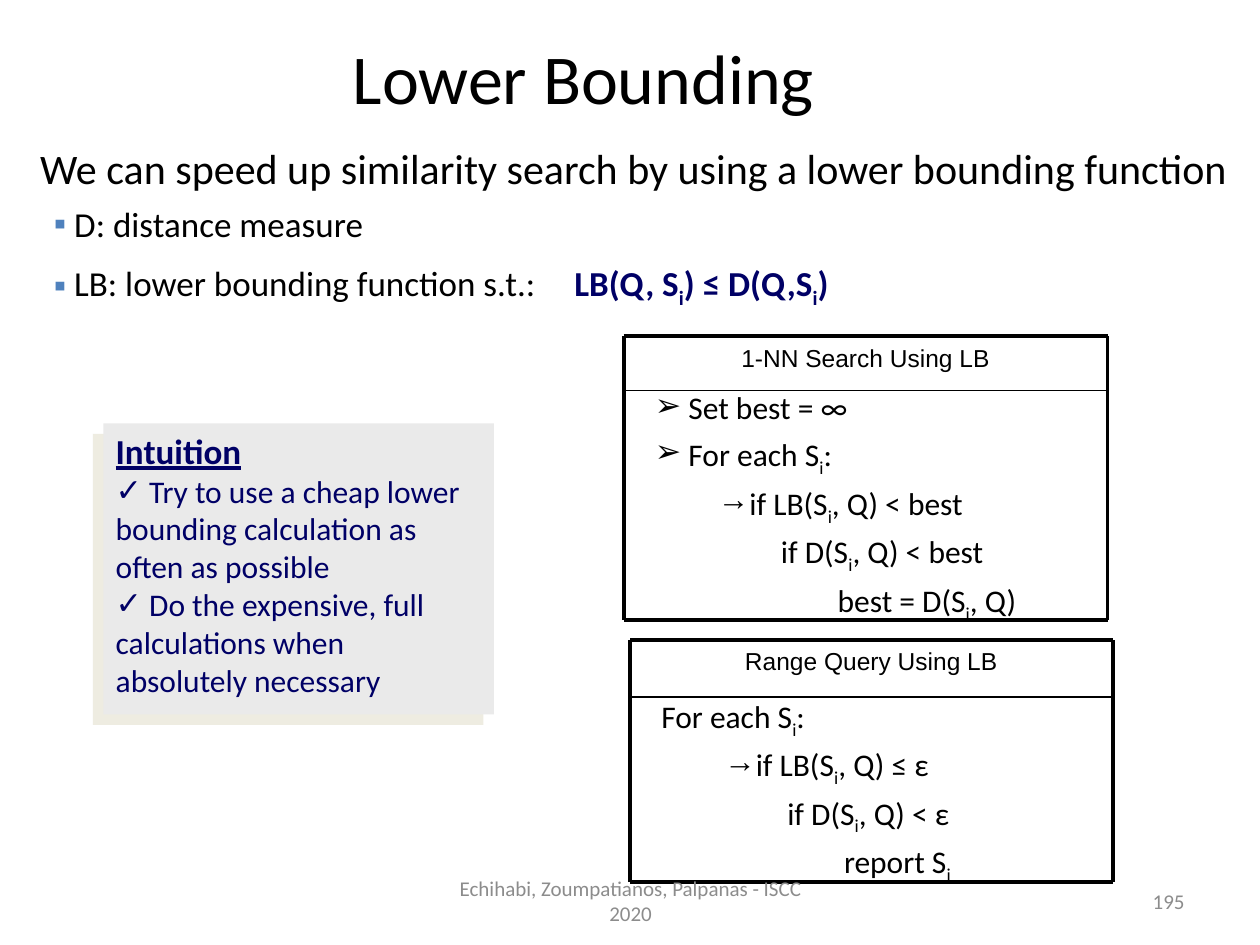
from lxml import etree
from pptx import Presentation
from pptx.dml.color import RGBColor
from pptx.enum.shapes import MSO_CONNECTOR, MSO_SHAPE
from pptx.enum.text import MSO_ANCHOR, PP_ALIGN
from pptx.oxml.ns import qn
from pptx.util import Inches, Pt

BLACK, NAVY, GREY, BLUE = "000000", "000066", "8C8C8C", "4F81BD"
PANEL, SHADOW = "EAEAEA", "EEECE1"

# Content: "_i" stands for a subscript i
TITLE = "Lower Bounding"
CLAIM = "We can speed up similarity search by using a lower bounding function"
DISTANCE = " D: distance measure"
BOUND = " LB: lower bounding function s.t.:\t"
INEQUALITY = "LB(Q, S_i) ≤ D(Q,S_i)"
INTUITION = [
    " Try to use a cheap lower bounding calculation as often as possible",
    " Do the expensive, full calculations when absolutely necessary",
]
# Each algorithm: heading, frame (left, top, rule, right, bottom),
# text box, steps (indent, bullet, text)
ALGORITHMS = [
    ("1-NN Search Using LB", (4.95, 2.67, 3.1, 8.79, 4.92), (5.1, 3.11, 3.4, 1.75), [
        (0, "➢", " Set best = ∞"),
        (0, "➢", " For each S_i:"),
        (0.5, "→", "if LB(S_i, Q) < best"),
        (1, None, "if D(S_i, Q) < best"),
        (1.45, None, "best = D(S_i, Q)"),
    ]),
    ("Range Query Using LB", (5, 5.08, 5.53, 8.83, 7), (5.15, 5.54, 3.39, 1.43), [
        (0, None, "For each S_i:"),
        (0.5, "→", "if LB(S_i, Q) ≤ ε"),
        (1, None, "if D(S_i, Q) < ε"),
        (1.45, None, "report S_i"),
    ]),
]
FOOTER = "Echihabi, Zoumpatianos, Palpanas - ISCC 2020"
PAGE = "195"


def rgb(color):
    return RGBColor.from_string(color)


def add_frame(box, anchor=MSO_ANCHOR.TOP):
    frame = slide.shapes.add_textbox(*map(Inches, box)).text_frame
    frame.word_wrap = True
    frame.vertical_anchor = anchor
    return frame


def add_paragraph(frame, align=PP_ALIGN.LEFT, before=0, line=None,
                  bullet=None, bullet_color=None, indent=0, tab=None):
    first = frame.paragraphs[0]
    is_first = not first.runs
    paragraph = first if is_first else frame.add_paragraph()
    props = paragraph._p.get_or_add_pPr()
    props.set("marL", str(Inches(indent)))
    props.set("indent", "0")
    if bullet:
        if bullet_color:
            color = etree.SubElement(props, qn("a:buClr"))
            etree.SubElement(color, qn("a:srgbClr"), val=bullet_color)
        etree.SubElement(props, qn("a:buFont"), typeface="Arial")
        etree.SubElement(props, qn("a:buChar"), char=bullet)
    if tab:
        stops = etree.SubElement(props, qn("a:tabLst"))
        etree.SubElement(stops, qn("a:tab"), pos=str(Inches(tab)), algn="l")
    paragraph.alignment = align
    if line:
        paragraph.line_spacing = line
    if before and not is_first:
        paragraph.space_before = Pt(before)
    return paragraph


def add_text(paragraph, text, size, color=BLACK, font="Calibri", bold=False, underline=False):
    for number, part in enumerate(text.split("_i")):
        pieces = [(part, False)] if number == 0 else [("i", True), (part, False)]
        for piece, subscript in pieces:
            if not piece:
                continue
            run = paragraph.add_run()
            run.text = piece
            run.font.size, run.font.name = Pt(size), font
            run.font.bold, run.font.underline = bold, underline
            run.font.color.rgb = rgb(color)
            if subscript:
                run._r.get_or_add_rPr().set("baseline", "-25000")


def add_line(x1, y1, x2, y2, width):
    line = slide.shapes.add_connector(MSO_CONNECTOR.STRAIGHT, *map(Inches, (x1, y1, x2, y2)))
    line.line.color.rgb = rgb(BLACK)
    line.line.width = Pt(width)
    etree.SubElement(line._element.spPr, qn("a:effectLst"))


prs = Presentation()
prs.slide_width, prs.slide_height = Inches(10), Inches(7.5)
slide = prs.slides.add_slide(prs.slide_layouts[6])

# Intuition panel with its offset shadow
panel = slide.shapes.add_shape(MSO_SHAPE.RECTANGLE, *map(Inches, (0.82, 3.36, 3.1, 2.31)))
panel.fill.solid()
panel.fill.fore_color.rgb = rgb(PANEL)
panel.line.fill.background()
panel.shadow.inherit = False
effects = panel._element.spPr.find(qn("a:effectLst"))
shadow = etree.SubElement(effects, qn("a:outerShdw"), dist=str(Pt(8.5)),
                          dir=str(135 * 60000), algn="ctr", rotWithShape="0")
etree.SubElement(shadow, qn("a:srgbClr"), val=SHADOW)

intuition = add_frame((0.82, 3.36, 3, 2.24))
add_text(add_paragraph(intuition), "Intuition", 20, NAVY, bold=True, underline=True)
for advice in INTUITION:
    add_text(add_paragraph(intuition, bullet="✓"), advice, 18, NAVY)

# Title and claim
title = add_frame((0.38, 0.16, 8.5, 0.89), MSO_ANCHOR.MIDDLE)
add_text(add_paragraph(title, PP_ALIGN.CENTER), TITLE, 40)
add_text(add_paragraph(add_frame((0.22, 1.08, 9.86, 0.5))), CLAIM, 24)

# Definitions
definitions = add_frame((0.33, 1.56, 8.17, 0.94))
add_text(add_paragraph(definitions, bullet="▪", bullet_color=BLUE), DISTANCE, 20)
bound = add_paragraph(definitions, before=9.5, bullet="▪", bullet_color=BLUE, tab=4.13)
add_text(bound, BOUND, 20)
add_text(bound, INEQUALITY, 20, NAVY, bold=True)

# Algorithm boxes
for heading, (left, top, rule, right, bottom), box, steps in ALGORITHMS:
    head = add_frame((left, top, right - left, rule - top))
    add_text(add_paragraph(head, PP_ALIGN.CENTER), heading, 14, font="Arial")
    for y, width in ((top, 2.25), (rule, 1), (bottom, 2.25)):
        add_line(left, y, right, y, width)
    for x in (left, right):
        add_line(x, top, x, bottom, 2.25)
    body = add_frame(box)
    for indent, bullet, step in steps:
        add_text(add_paragraph(body, before=10.5, line=0.7, bullet=bullet, indent=indent), step, 18)

# Footer and page number
for text, box, align in ((FOOTER, (3.42, 6.95, 3.17, 0.4), PP_ALIGN.CENTER),
                         (PAGE, (7.17, 6.95, 2.33, 0.4), PP_ALIGN.RIGHT)):
    add_text(add_paragraph(add_frame(box, MSO_ANCHOR.MIDDLE), align), text, 12, GREY)

prs.save("out.pptx")
